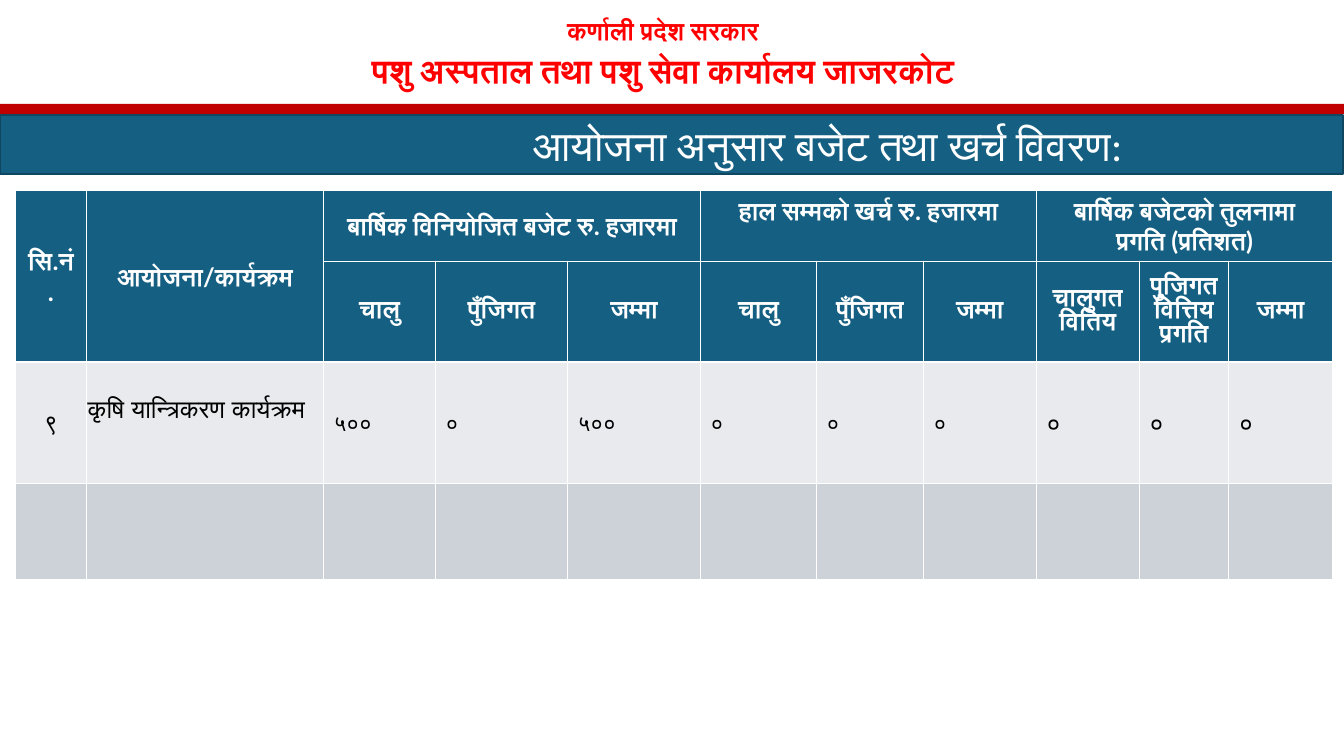
from dataclasses import dataclass
from lxml.etree import SubElement
from pptx import Presentation
from pptx.dml.color import RGBColor
from pptx.enum.shapes import MSO_SHAPE
from pptx.enum.text import MSO_ANCHOR, MSO_AUTO_SIZE, PP_ALIGN
from pptx.oxml.ns import qn
from pptx.util import Inches, Pt

OFFICE_LINES = [("कर्णाली प्रदेश सरकार", 18, 0), ("पशु अस्पताल तथा पशु सेवा कार्यालय जाजरकोट", 24, 3)]
TITLE = "आयोजना अनुसार बजेट तथा खर्च विवरण:"
SIDE_HEADS = ["सि.नं.", "आयोजना/कार्यक्रम"]
GROUP_HEADS = ["बार्षिक विनियोजित बजेट रु. हजारमा", "हाल सम्मको खर्च रु. हजारमा", "बार्षिक बजेटको तुलनामा प्रगति (प्रतिशत)"]
SUB_HEADS = ["चालु", "पुँजिगत", "जम्मा"] * 2 + ["चालुगत वितिय", "पुजिगत वित्तिय प्रगति", "जम्मा"]
PROGRAM = ["९", "कृषि यान्त्रिकरण कार्यक्रम", "५००", "०", "५००", "०", "०", "०", "०", "०", "०"]
COLUMN_WIDTHS = [0.71, 2.35, 1.11, 1.31, 1.32, 1.15, 1.06, 1.12, 1.02, 0.89, 1.03]
ROW_HEIGHTS = [0.7, 1.0, 1.21, 0.95]
GROUP_SIZE = 3


@dataclass(frozen=True)
class Theme:
    red: str = "FF0000"
    stripe: str = "C00000"
    teal: str = "156082"
    teal_edge: str = "104760"
    white: str = "FFFFFF"
    black: str = "000000"
    row_light: str = "E8EAED"
    row_dark: str = "CCD2D8"
    main_font: str = "Lato"
    title_font: str = "Calibri"
    program_font: str = "Arial"
    title_size: int = 30
    table_size: int = 18
    amount_size: int = 16


THEME = Theme()


def rgb(value):
    return RGBColor.from_string(value)


def write(para, text, size=THEME.table_size, color=THEME.white, font=THEME.main_font,
          bold=False, align=PP_ALIGN.LEFT, before=0, spacing=None):
    para.alignment = align
    para.space_before = Pt(before)
    para.line_spacing = spacing
    span = para.add_run()
    span.text = text
    span.font.size = Pt(size)
    span.font.bold = bold
    span.font.color.rgb = rgb(color)
    span.font.name = font
    SubElement(span.font._element, qn("a:cs"), typeface=font)


def paint(cell, fill, bottom=1):
    properties = cell._tc.get_or_add_tcPr()
    for side, width in (("lnL", 1), ("lnR", 1), ("lnT", 1), ("lnB", bottom)):
        line = SubElement(properties, qn(f"a:{side}"), w=str(Pt(width)))
        color = SubElement(SubElement(line, qn("a:solidFill")), qn("a:srgbClr"))
        color.set("val", THEME.white)
    cell.fill.solid()
    cell.fill.fore_color.rgb = rgb(fill)
    cell.vertical_anchor = MSO_ANCHOR.MIDDLE


def head(cell, text, spacing=None):
    write(cell.text_frame.paragraphs[0], text, bold=True, align=PP_ALIGN.CENTER, spacing=spacing)


def add_letterhead(page):
    stripe = page.shapes.add_shape(MSO_SHAPE.RECTANGLE, 0, Inches(1.03), Inches(13.33), Inches(0.1))
    stripe.shadow.inherit = False
    stripe.fill.solid()
    stripe.fill.fore_color.rgb = rgb(THEME.stripe)
    stripe.line.fill.background()
    box = page.shapes.add_textbox(Inches(1.4), Inches(0.1), Inches(10.35), Inches(0.84))
    frame = box.text_frame
    frame.word_wrap = True
    for index, (text, size, before) in enumerate(OFFICE_LINES):
        para = frame.add_paragraph() if index else frame.paragraphs[0]
        write(para, text, size=size, color=THEME.red, bold=True, align=PP_ALIGN.CENTER, before=before)


def add_title(page):
    title = page.shapes.title
    title.left, title.top, title.width, title.height = 0, Inches(1.14), Inches(13.32), Inches(0.59)
    title.fill.solid()
    title.fill.fore_color.rgb = rgb(THEME.teal)
    title.line.color.rgb = rgb(THEME.teal_edge)
    title.line.width = Pt(1.5)
    frame = title.text_frame
    frame.auto_size = MSO_AUTO_SIZE.NONE
    frame.vertical_anchor = MSO_ANCHOR.MIDDLE
    frame.margin_left = Inches(5.28)
    write(frame.paragraphs[0], TITLE, size=THEME.title_size, font=THEME.title_font)


def add_budget_table(page):
    table = page.shapes.add_table(len(ROW_HEIGHTS), len(COLUMN_WIDTHS), Inches(0.15), Inches(1.89),
                                  Inches(sum(COLUMN_WIDTHS)), Inches(sum(ROW_HEIGHTS))).table
    for column, width in zip(table.columns, COLUMN_WIDTHS):
        column.width = Inches(width)
    for row, height in zip(table.rows, ROW_HEIGHTS):
        row.height = Inches(height)
    fills = [THEME.teal, THEME.teal, THEME.row_light, THEME.row_dark]
    for row, fill in zip(table.rows, fills):
        for cell in row.cells:
            paint(cell, fill, bottom=3 if row is table.rows[0] else 1)

    first_group = len(SIDE_HEADS)
    for index, text in enumerate(SIDE_HEADS):
        table.cell(0, index).merge(table.cell(1, index))
        head(table.cell(0, index), text)
    for index, text in enumerate(GROUP_HEADS):
        start = first_group + index * GROUP_SIZE
        table.cell(0, start).merge(table.cell(0, start + GROUP_SIZE - 1))
        head(table.cell(0, start), text)
    table.cell(0, first_group + GROUP_SIZE).vertical_anchor = MSO_ANCHOR.TOP
    for index, text in enumerate(SUB_HEADS, first_group):
        head(table.cell(1, index), text, spacing=0.8)

    first_percent = first_group + 2 * GROUP_SIZE
    for index, text in enumerate(PROGRAM):
        is_amount = first_group <= index < first_percent
        write(table.cell(2, index).text_frame.paragraphs[0], text, color=THEME.black,
              size=THEME.amount_size if is_amount else THEME.table_size,
              font=THEME.program_font if index == 1 else THEME.main_font,
              align=PP_ALIGN.LEFT if index else PP_ALIGN.CENTER)
    program = table.cell(2, 1)
    program.margin_left = program.margin_top = program.margin_right = Inches(0.01)
    program.margin_bottom = Inches(0.28)


def main():
    deck = Presentation()
    deck.slide_width, deck.slide_height = Inches(13.33), Inches(7.5)
    page = deck.slides.add_slide(deck.slide_layouts[5])
    add_letterhead(page)
    add_title(page)
    add_budget_table(page)
    deck.save("out.pptx")


if __name__ == "__main__":
    main()
